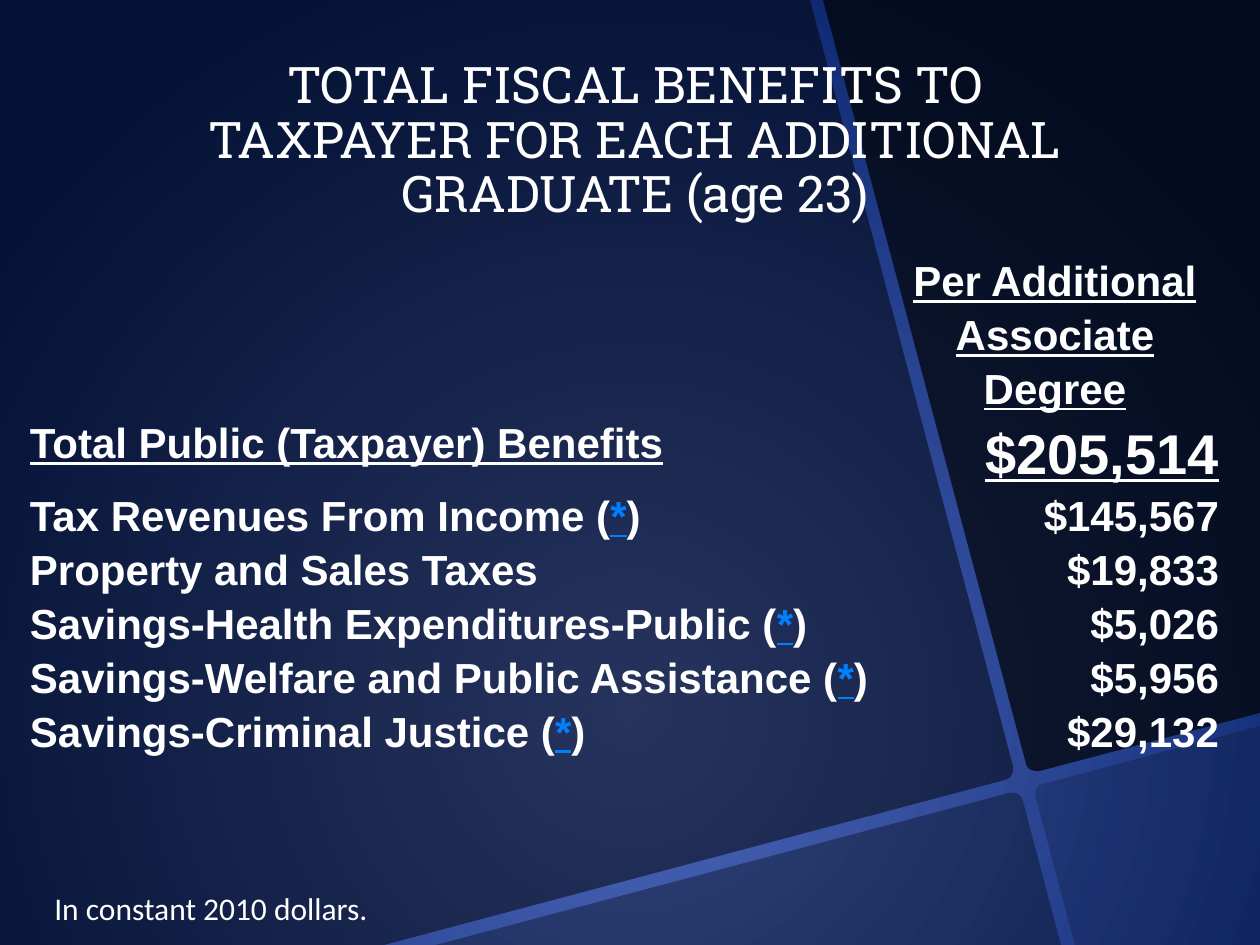
"""Build the slide on fiscal benefits per additional graduate."""
from lxml.etree import SubElement
from pptx import Presentation
from pptx.dml.color import RGBColor
from pptx.enum.text import MSO_ANCHOR, MSO_AUTO_SIZE, PP_ALIGN
from pptx.oxml import parse_xml
from pptx.oxml.ns import nsdecls, qn
from pptx.util import Pt

SCALE = 914400 / 126
W, H = 1260, 945
COLORS = {"white": "FFFFFF", "link": "0080FF", "shade": "000000",
          "glow": "4E68BC", "edge": "0B266E"}
PANELS = [
    (50, [(0, 0), (810, 0), (1013, 766), (1014, 772, 1011, 779, 1005, 780),
          (384, H), (0, H)]),
    (35, [(1013, 793), (1018, 793, 1022, 796, 1023, 801), (1061, H), (436, H),
          (1009, 793), (1010, 793, 1012, 793, 1013, 793)]),
    (20, [(W, 726), (W, H), (1075, H), (1036, 798),
          (1034, 791, 1037, 785, 1043, 784)]),
    (70, [(823, 0), (W, 0), (W, 713), (1040, 771),
          (1033, 772, 1027, 769, 1026, 764)]),
]
HEADING = "Per Additional Associate Degree"
TOTAL = ("Total Public (Taxpayer) Benefits", "$205,514")
BENEFITS = [
    ("Tax Revenues From Income (*)", "$145,567"),
    ("Property and Sales Taxes", "$19,833"),
    ("Savings-Health Expenditures-Public (*)", "$5,026"),
    ("Savings-Welfare and Public Assistance (*)", "$5,956"),
    ("Savings-Criminal Justice (*)", "$29,132"),
]
COLUMNS = (861, 346)
ROWS = (162, 72, 54, 54, 54, 54, 54)


def px(n):
    """Turn pixels into EMU."""
    return round(n * SCALE)


def rgb(name):
    """Look up a colour."""
    return RGBColor.from_string(COLORS[name])


def assign(obj, **values):
    """Set several attributes on an object."""
    for key, value in values.items():
        setattr(obj, key, value)


def place(sp, x, y, w, h):
    """Position a shape in pixels."""
    assign(sp, left=px(x), top=px(y), width=px(w), height=px(h))


def add_run(p, text, color="white", **values):
    """Add a formatted run to a paragraph."""
    r = p.add_run()
    r.text = text
    assign(r.font, **values)
    r.font.color.rgb = rgb(color)


def set_background(s):
    """Fill the slide with a radial glow centred low."""
    fill = s.background.fill
    fill.gradient()
    for stop, name, position in zip(fill.gradient_stops, ("glow", "edge"), (0, 1)):
        stop.color.rgb = rgb(name)
        stop.position = position
    grad = next(s._element.iter(qn("a:gradFill")))
    grad.replace(grad.find(qn("a:lin")), parse_xml(
        f'<a:path {nsdecls("a")} path="circle">'
        '<a:fillToRect l="50000" t="50000" r="50000" b="0"/></a:path>'))


def outline(steps, parts=6):
    """Flatten corner curves into points."""
    points = []
    for step in steps:
        if len(step) == 2:
            points.append(step)
            continue
        start, *rest = points[-1], step[:2], step[2:4], step[4:]
        for i in range(1, parts + 1):
            t = i / parts
            weights = ((1 - t) ** 3, 3 * t * (1 - t) ** 2, 3 * t * t * (1 - t), t ** 3)
            points.append(tuple(sum(k * q[axis] for k, q in zip(weights, (start, *rest)))
                                for axis in (0, 1)))
    return points


def add_panel(s, alpha, steps):
    """Draw one translucent dark panel."""
    first, *others = [(x * 10, y * 10) for x, y in outline(steps)]
    builder = s.shapes.build_freeform(*first, scale=SCALE / 10)
    builder.add_line_segments(others, close=True)
    sp = builder.convert_to_shape()
    sp.shadow.inherit = False
    sp.line.fill.background()
    sp.fill.solid()
    sp.fill.fore_color.rgb = rgb("shade")
    color = next(sp._element.spPr.iter(qn("a:srgbClr")))
    SubElement(color, qn("a:alpha"), val=str(alpha * 1000))


def add_title(s, text):
    """Format the title placeholder and bring it in front of the panels."""
    sp = s.shapes.title
    s.shapes._spTree.append(sp._element)
    place(sp, 136, 32, 998, 198)
    tf = sp.text_frame
    assign(tf, word_wrap=True, auto_size=MSO_AUTO_SIZE.NONE,
           vertical_anchor=MSO_ANCHOR.BOTTOM)
    p = tf.paragraphs[0]
    assign(p, alignment=PP_ALIGN.CENTER, line_spacing=0.9)
    add_run(p, text, size=Pt(28.8), name="Roboto Slab")


def clear_cell(cell):
    """Remove the fill, borders and vertical margins of a cell."""
    assign(cell, margin_left=px(9), margin_right=px(9), margin_top=0, margin_bottom=0)
    cell.fill.background()
    for i, side in enumerate(("lnL", "lnR", "lnT", "lnB")):
        line = parse_xml(f'<a:{side} {nsdecls("a")} w="0"><a:noFill/></a:{side}>')
        cell._tc.tcPr.insert(i, line)


def write_cell(cell, text, align, size=24, underline=False):
    """Write bold cell text, with any asterisk in the link style."""
    p = cell.text_frame.paragraphs[0]
    assign(p, alignment=align, line_spacing=1.15)
    font = {"name": "Arial", "size": Pt(size), "bold": True}
    for part in text.partition("*"):
        if part:
            link = part == "*"
            add_run(p, part, "link" if link else "white",
                    underline=underline or link, **font)


def add_benefits(s):
    """Add the benefits table."""
    frame = s.shapes.add_table(len(ROWS), len(COLUMNS), px(21), px(252),
                               px(sum(COLUMNS)), px(sum(ROWS)))
    table = frame.table
    assign(table, first_row=False, horz_banding=False)
    for column, width in zip(table.columns, COLUMNS):
        column.width = px(width)
    for row, height in zip(table.rows, ROWS):
        row.height = px(height)
    for cell in table.iter_cells():
        clear_cell(cell)
    write_cell(table.cell(0, 1), HEADING, PP_ALIGN.CENTER, underline=True)
    write_cell(table.cell(1, 0), TOTAL[0], PP_ALIGN.JUSTIFY, underline=True)
    write_cell(table.cell(1, 1), TOTAL[1], PP_ALIGN.RIGHT, 32, True)
    for i, (label, amount) in enumerate(BENEFITS, 2):
        write_cell(table.cell(i, 0), label, PP_ALIGN.LEFT)
        write_cell(table.cell(i, 1), amount, PP_ALIGN.RIGHT)


def add_note(s, text):
    """Add the footnote."""
    tf = s.shapes.add_textbox(px(42), px(883), px(343), px(50)).text_frame
    assign(tf, word_wrap=False, auto_size=MSO_AUTO_SIZE.SHAPE_TO_FIT_TEXT)
    add_run(tf.paragraphs[0], text, size=Pt(18), name="Calibri")


def main():
    """Build and save the slide."""
    prs = Presentation()
    assign(prs, slide_width=px(W), slide_height=px(H))
    s = prs.slides.add_slide(prs.slide_layouts[5])
    set_background(s)
    for alpha, steps in PANELS:
        add_panel(s, alpha, steps)
    add_title(s, "TOTAL FISCAL BENEFITS TO TAXPAYER FOR EACH ADDITIONAL GRADUATE (age 23)")
    add_benefits(s)
    add_note(s, "In constant 2010 dollars.")
    prs.save("out.pptx")


if __name__ == "__main__":
    main()
